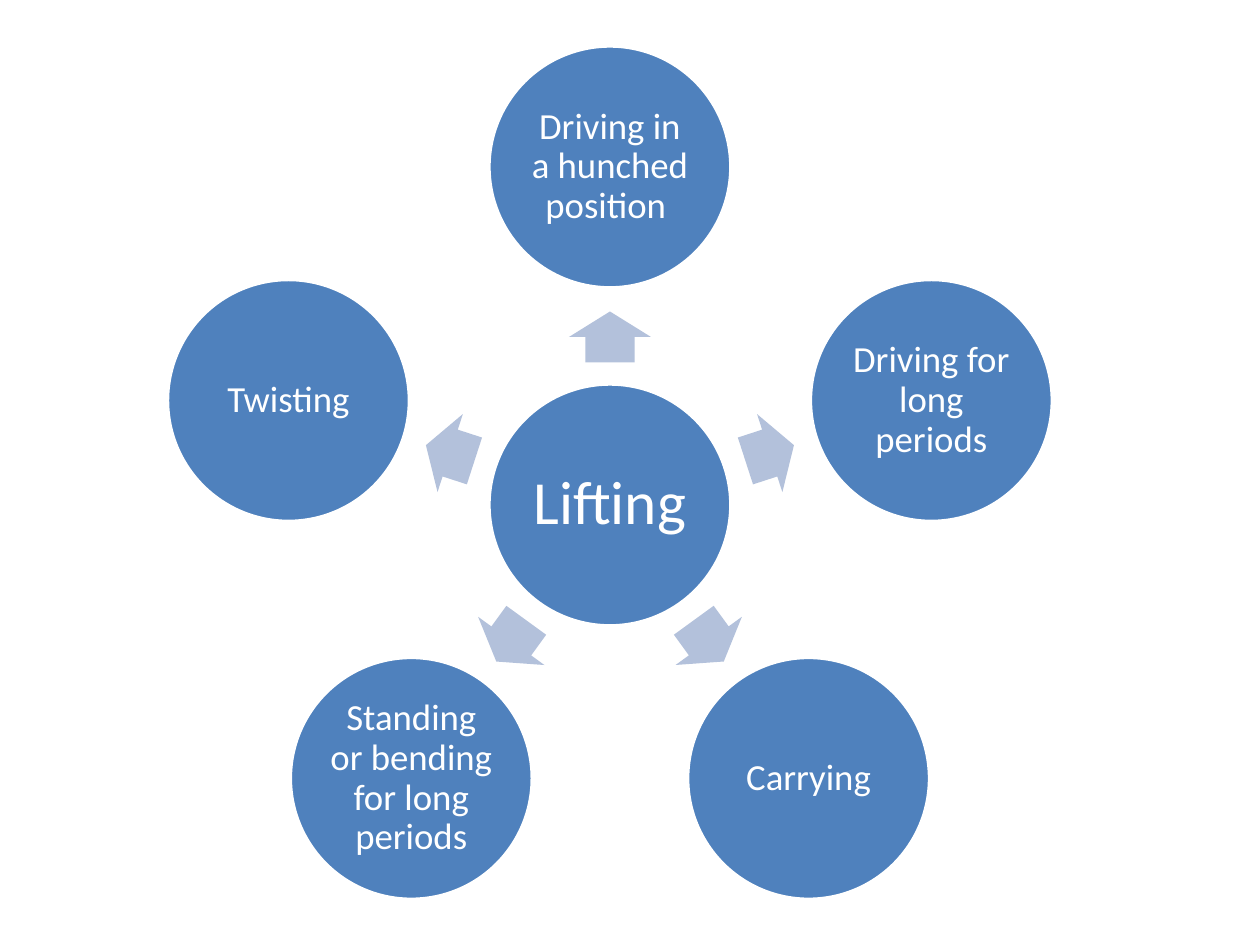
from math import cos, radians, sin

from pptx import Presentation
from pptx.dml.color import RGBColor
from pptx.enum.shapes import MSO_SHAPE
from pptx.enum.text import MSO_ANCHOR, PP_ALIGN
from pptx.util import Pt

PX = 914400 // 126  # EMU per px
COLORS = {"circle": "4F81BD", "arrow": "B3C1DB", "white": "FFFFFF"}
CAUSES = [
    "Driving in a hunched position ",
    "Driving for long periods",
    "Carrying",
    "Standing or bending for long periods",
    "Twisting",
]


def rgb(name):
    return RGBColor.from_string(COLORS[name])


def add_centred(s, kind, cx, cy, w, h, color):
    """Add a filled shape centred on a point."""
    box = [round(v * PX) for v in (cx - w / 2, cy - h / 2, w, h)]
    sp = s.shapes.add_shape(kind, *box)
    sp.shadow.inherit = False
    sp.fill.solid()
    sp.fill.fore_color.rgb = rgb(color)
    return sp


def add_circle(s, cx, cy, size, text, font_size, inset):
    sp = add_centred(s, MSO_SHAPE.OVAL, cx, cy, size, size, "circle")
    sp.line.color.rgb = rgb("white")
    sp.line.width = Pt(2)
    tf = sp.text_frame
    tf.word_wrap = True
    tf.vertical_anchor = MSO_ANCHOR.MIDDLE
    tf.margin_left = tf.margin_right = inset * PX
    tf.margin_top = tf.margin_bottom = inset * PX
    p = tf.paragraphs[0]
    p.text = text
    p.alignment = PP_ALIGN.CENTER
    p.line_spacing = 0.9
    p.font.name = "Calibri"
    p.font.size = Pt(font_size)
    p.font.color.rgb = rgb("white")


def add_arrow(s, cx, cy, angle):
    sp = add_centred(s, MSO_SHAPE.RIGHT_ARROW, cx, cy, 51, 82, "arrow")
    sp.adjustments[0] = 0.6
    sp.adjustments[1] = 0.5
    sp.line.fill.background()
    sp.rotation = angle % 360


def add_radial(s, left, top, width, hub, causes):
    """Draw a hub with arrows out to a ring of circles, in a box."""
    size, ring, arrow_ring = 242, 338, 168
    cx, cy = left + width / 2, top + size / 2 + ring

    # Hub
    add_circle(s, cx, cy, size, hub, 35, 6)

    # Arrows and outer circles, clockwise from the top
    for i, cause in enumerate(causes):
        angle = -90 + i * 360 / len(causes)
        dx, dy = cos(radians(angle)), sin(radians(angle))
        add_arrow(s, cx + arrow_ring * dx, cy + arrow_ring * dy, angle)
        add_circle(s, cx + ring * dx, cy + ring * dy, size, cause, 21, 4)


def main():
    prs = Presentation()
    prs.slide_width, prs.slide_height = 1260 * PX, 945 * PX
    s = prs.slides.add_slide(prs.slide_layouts[6])
    add_radial(s, 168, 46, 884, "Lifting ", CAUSES)
    prs.save("out.pptx")


if __name__ == "__main__":
    main()
